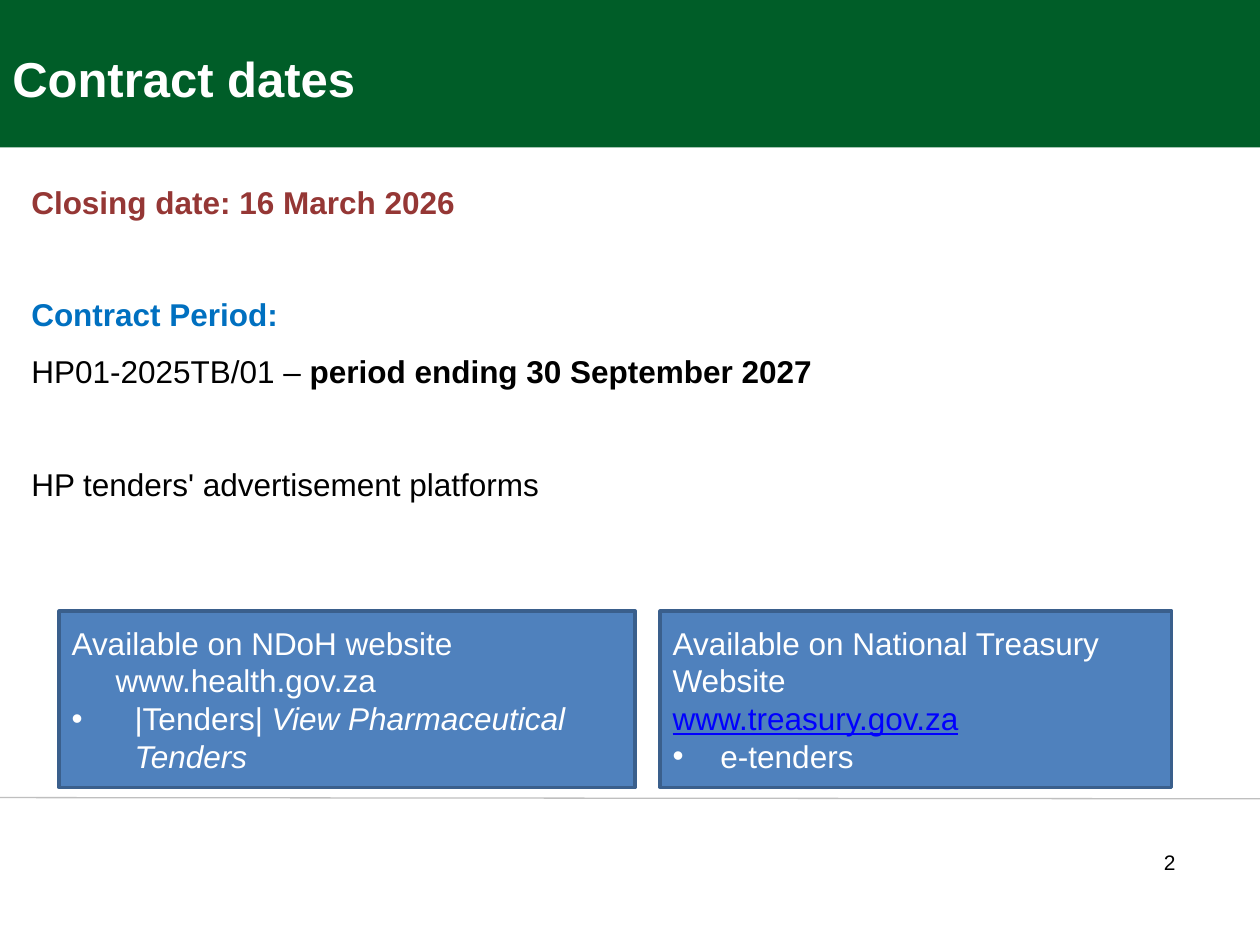
from lxml.etree import SubElement
from pptx import Presentation
from pptx.dml.color import RGBColor
from pptx.enum.shapes import MSO_CONNECTOR as Connector, MSO_SHAPE as Shape
from pptx.enum.text import MSO_ANCHOR as Anchor, PP_ALIGN as Align
from pptx.oxml.ns import qn
from pptx.util import Inches, Pt

WHITE, BLACK = "FFFFFF", "000000"


def color(value):
    return RGBColor.from_string(value)


def add_rectangle(page, left, top, width, height, fill, outline=None):
    box = page.shapes.add_shape(
        Shape.RECTANGLE, Inches(left), Inches(top), Inches(width), Inches(height))
    box.shadow.inherit = False
    box.fill.solid()
    box.fill.fore_color.rgb = color(fill)
    if outline:
        box.line.color.rgb = color(outline)
        box.line.width = Pt(2)
    else:
        box.line.fill.background()
    return box


def add_text_frame(page, left, top, width, height, anchor=Anchor.TOP):
    box = page.shapes.add_textbox(
        Inches(left), Inches(top), Inches(width), Inches(height))
    frame = box.text_frame
    frame.word_wrap = True
    frame.vertical_anchor = anchor
    return frame


def add_rule(page, start, end, line_color):
    rule = page.shapes.add_connector(
        Connector.STRAIGHT, *(Inches(value) for value in start + end))
    rule.line.color.rgb = color(line_color)
    rule.line.width = Pt(0.75)
    SubElement(rule._element.spPr, qn("a:effectLst"))


def set_indent(para, indent, bullet):
    properties = para._p.get_or_add_pPr()
    properties.set("marL", str(Inches(indent)))
    if bullet:
        properties.set("indent", str(-Inches(indent)))
        SubElement(properties, qn("a:buFont"), typeface="Arial")
        SubElement(properties, qn("a:buChar"), char="•")


def add_paragraph(frame, *texts, size=18, text_color=BLACK, bold=None,
                  underline=None, indent=0, bullet=False):
    first = frame.paragraphs[0]
    para = frame.add_paragraph() if first.runs else first
    para.alignment = Align.LEFT
    if indent:
        set_indent(para, indent, bullet)
    font = para.font
    font.name = "Arial"
    font.size = Pt(size)
    font.bold = bold
    font.underline = underline
    font.color.rgb = color(text_color)
    for text in texts:
        para.add_run().text = text
    return para


def add_dates(page):
    frame = add_text_frame(page, 0.15, 1.25, 9.79, 3.23)
    add_paragraph(frame, "Closing date: 16 March 2026", text_color="953735", bold=True)
    heading = add_paragraph(frame, "Contract Period:", text_color="0070C0", bold=True)
    period = add_paragraph(frame, "HP01-2025TB/01 – ", "period ending 30 September 2027")
    period.runs[1].font.bold = True
    platforms = add_paragraph(frame, "HP tenders' advertisement platforms")
    for para in frame.paragraphs:
        para.line_spacing = 1.5
    for para in (heading, platforms):
        para.space_before = Pt(32)


def add_platform(page, left, width, title):
    box = add_rectangle(page, left, 4.85, width, 1.4, "4F81BD", "3A5F8C")
    frame = box.text_frame
    frame.word_wrap = True
    frame.vertical_anchor = Anchor.MIDDLE
    add_paragraph(frame, title, text_color=WHITE)
    return frame


def add_platforms(page):
    health = add_platform(page, 0.47, 4.57, "Available on NDoH website")
    add_paragraph(health, "www.health.gov.za", text_color=WHITE, indent=0.35)
    tenders = add_paragraph(health, "|Tenders| ", "View Pharmaceutical Tenders",
                            text_color=WHITE, indent=0.5, bullet=True)
    tenders.runs[1].font.italic = True

    treasury = add_platform(page, 5.24, 4.06, "Available on National Treasury Website")
    add_paragraph(treasury, "www.treasury.gov.za", text_color="0000FF", underline=True)
    add_paragraph(treasury, "e-tenders", text_color=WHITE, indent=0.38, bullet=True)


def add_page_number(page, number):
    frame = add_text_frame(page, 1, 6.25, 8.57, 1.25, Anchor.MIDDLE)
    frame.margin_right = Inches(0.24)
    frame.margin_bottom = Inches(0.12)
    add_paragraph(frame, number, size=12).alignment = Align.RIGHT


def main():
    deck = Presentation()
    deck.slide_width, deck.slide_height = Inches(10), Inches(7.5)
    page = deck.slides.add_slide(deck.slide_layouts[6])

    add_rectangle(page, 0, 0, 10, 1.17, "005D28")
    add_rule(page, (0, 6.33), (10, 6.34), "BFBFBF")
    add_dates(page)
    add_page_number(page, "2")
    title = add_text_frame(page, 0, -0.18, 6.08, 1.08, Anchor.BOTTOM)
    add_paragraph(title, "Contract dates", size=28, text_color=WHITE, bold=True)
    add_platforms(page)

    deck.save("out.pptx")


if __name__ == "__main__":
    main()
